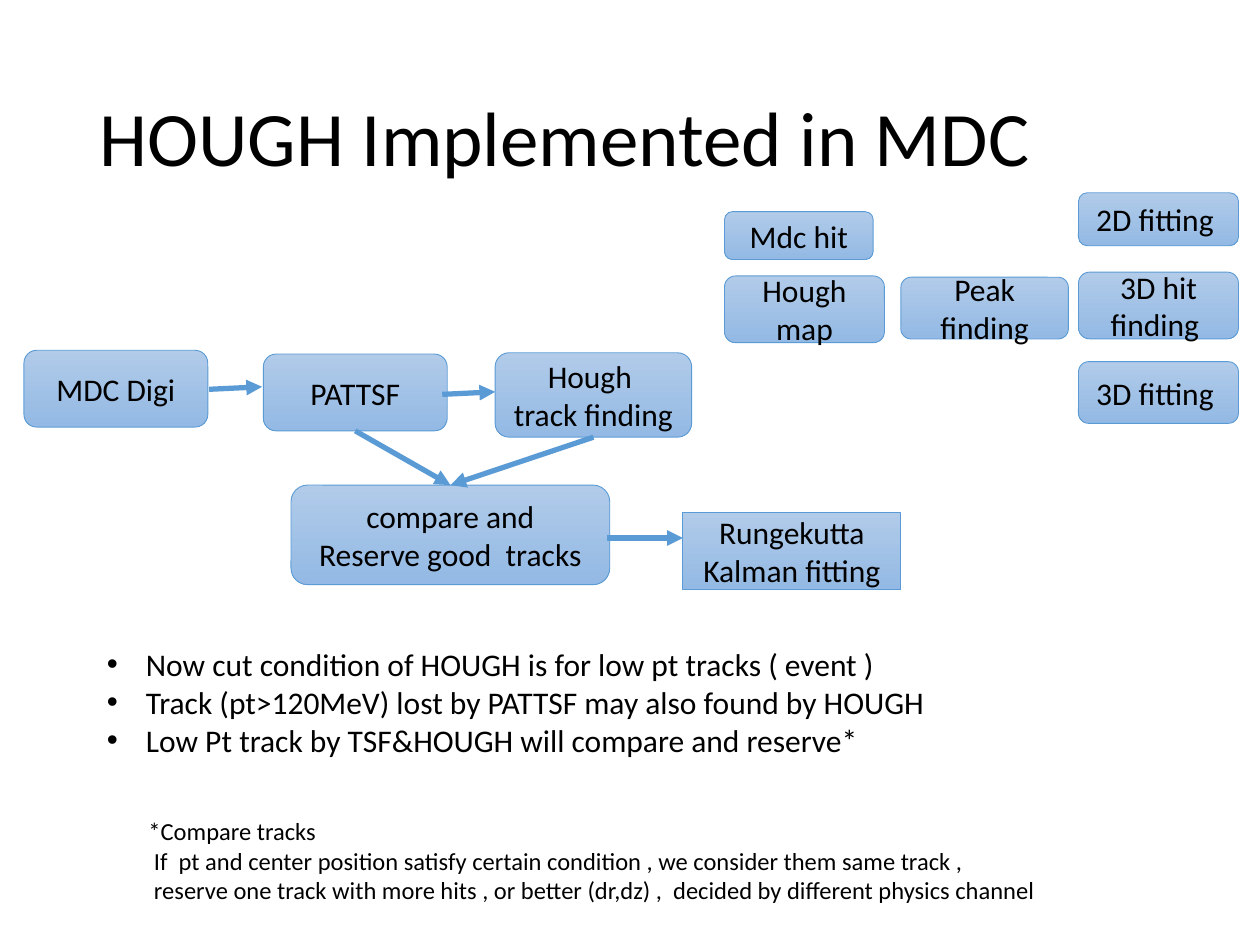
"""Build the slide on the HOUGH track finding flow in the MDC."""
from lxml import etree
from pptx import Presentation
from pptx import util as u
from pptx.dml.color import RGBColor
from pptx.enum import shapes, text
from pptx.oxml.ns import qn

WIDTH, HEIGHT = u.Inches(10), u.Inches(7.5)
COLUMNS, ROWS = 100, 75
COLORS = {"text": "000000", "line": "5B9BD5", "top": "B1CBE9", "bottom": "93B9E4"}
ROUND, RECT = shapes.MSO_SHAPE.ROUNDED_RECTANGLE, shapes.MSO_SHAPE.RECTANGLE
CENTER, LEFT = text.PP_ALIGN.CENTER, text.PP_ALIGN.LEFT

STEPS = {
    "digi": (ROUND, (1.9, 27.8, 14.6, 6.1), ["MDC Digi"]),
    "pattsf": (ROUND, (20.9, 28.1, 14.6, 6.1), ["PATTSF"]),
    "hough": (ROUND, (39.3, 28, 15.6, 6.7), ["Hough ", "track finding "]),
    "compare": (ROUND, (23.1, 38.5, 25.3, 7.9), ["compare and", "Reserve good  tracks"]),
    "fit": (RECT, (54.2, 40.7, 17.3, 6.1), ["Rungekutta", "Kalman fitting"]),
    "hit": (ROUND, (57.5, 16.8, 11.8, 3.8), ["Mdc hit"]),
    "map": (ROUND, (57.5, 21.9, 12.7, 5.3), ["Hough map"]),
    "peak": (ROUND, (71.5, 22, 13.3, 4.9), ["Peak finding"]),
    "fit 2d": (ROUND, (85.6, 15.3, 12.7, 4.2), ["2D fitting "]),
    "hit 3d": (ROUND, (85.6, 21.6, 12.7, 5.3), ["3D hit finding "]),
    "fit 3d": (ROUND, (85.6, 28.7, 12.7, 4.9), ["3D fitting "]),
}
ARROWS = [
    (16.6, 30.9, 20.8, 30.7),
    (35.1, 31.3, 39.3, 31.1),
    (48.2, 42.7, 54.2, 42.7),
]
JOINS = [("pattsf", "compare"), ("hough", "compare")]
POINTS = [
    "Now cut condition of HOUGH is for low pt tracks ( event )",
    "Track (pt>120MeV) lost by PATTSF may also found by HOUGH",
    "Low Pt track by TSF&HOUGH will compare and reserve*",
]
NOTES = [
    "*Compare tracks",
    " If  pt and center position satisfy certain condition , we consider them same track ,",
    " reserve one track with more hits , or better (dr,dz) ,  decided by different physics channel",
]


def color(name):
    return RGBColor.from_string(COLORS[name])


def place(left, top, width, height):
    """Turn grid columns and rows into slide lengths."""
    return [round(part * size) for part, size in zip(
        (left, top, width, height), (WIDTH / COLUMNS, HEIGHT / ROWS) * 2)]


def apply(target, values):
    for name, value in values.items():
        setattr(target, name, value)


def write(frame, lines, size, align=LEFT, anchor=text.MSO_ANCHOR.TOP, spacing=1.0):
    """Fill a text frame with one paragraph a line."""
    apply(frame, {"word_wrap": True, "vertical_anchor": anchor})
    for number, line in enumerate(lines):
        para = frame.add_paragraph() if number else frame.paragraphs[0]
        apply(para, {"alignment": align, "line_spacing": spacing})
        span = para.add_run()
        span.text = line
        apply(span.font, {"name": "Calibri", "size": u.Pt(size)})
        span.font.color.rgb = color("text")


def add_title(page, title):
    holder = page.shapes.title
    apply(holder, dict(zip(("left", "top", "width", "height"), place(6.9, 4, 86.2, 14.5))))
    write(holder.text_frame, [title], 44, anchor=text.MSO_ANCHOR.MIDDLE, spacing=0.9)


def add_step(page, kind, area, lines):
    """Add a box with a vertical blue gradient."""
    box = page.shapes.add_shape(kind, *place(*area))
    box.shadow.inherit = False
    box.fill.gradient()
    box.fill.gradient_angle = 270
    for stop, name in zip(box.fill.gradient_stops, ("top", "bottom")):
        stop.color.rgb = color(name)
    box.line.color.rgb = color("line")
    box.line.width = u.Pt(0.5)
    write(box.text_frame, lines, 18, CENTER, text.MSO_ANCHOR.MIDDLE)
    return box


def add_arrow(page, ends=(0, 0, 0, 0)):
    """Add a straight line with a triangle at its end."""
    arrow = page.shapes.add_connector(shapes.MSO_CONNECTOR.STRAIGHT, *place(*ends))
    arrow.line.color.rgb = color("line")
    arrow.line.width = u.Pt(3)
    etree.SubElement(arrow.line._get_or_add_ln(), qn("a:tailEnd"), type="triangle")
    etree.SubElement(arrow._element.spPr, qn("a:effectLst"))
    return arrow


def join(page, upper, lower):
    arrow = add_arrow(page)
    arrow.begin_connect(upper, 2)
    arrow.end_connect(lower, 0)


def add_list(page, area, lines, size, margin, bullet=None):
    """Add indented text, with hanging bullets if a sign is given."""
    box = page.shapes.add_textbox(*place(*area))
    write(box.text_frame, lines, size)
    for para in box.text_frame.paragraphs:
        properties = para._p.get_or_add_pPr()
        properties.set("marL", str(u.Inches(margin)))
        if bullet:
            properties.set("indent", str(-u.Inches(margin)))
            etree.SubElement(properties, qn("a:buFont"), typeface="Arial")
            etree.SubElement(properties, qn("a:buChar"), char=bullet)


def main():
    deck = Presentation()
    apply(deck, {"slide_width": WIDTH, "slide_height": HEIGHT})
    page = deck.slides.add_slide(deck.slide_layouts[5])
    add_title(page, "HOUGH Implemented in MDC")
    steps = {name: add_step(page, *step) for name, step in STEPS.items()}
    for ends in ARROWS:
        add_arrow(page, ends)
    for upper, lower in JOINS:
        join(page, steps[upper], steps[lower])
    add_list(page, (7.5, 50.7, 71.9, 13.1), POINTS, 18, 0.31, "•")
    add_list(page, (5.8, 64.3, 93.7, 8.1), NOTES, 14, 0.5)
    deck.save("out.pptx")


if __name__ == "__main__":
    main()
